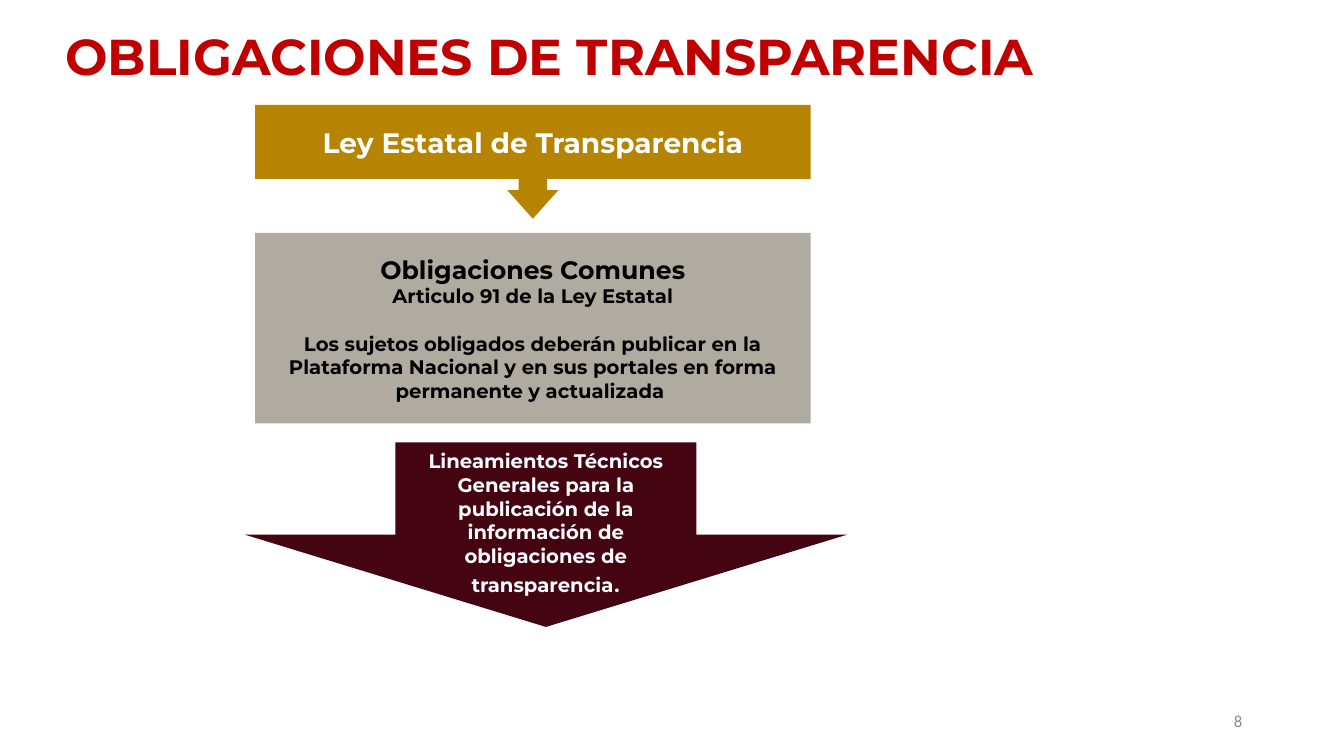
from pptx import Presentation
from pptx import util as u
from pptx.dml.color import RGBColor
from pptx.enum import shapes, text

PX = 9144
SHAPE = shapes.MSO_SHAPE
ALIGN = text.PP_ALIGN


def px(length):
    return u.Emu(length * PX)


def color(hex_code):
    return RGBColor.from_string(hex_code)


def write(paragraph, content, size=14, font="Montserrat", ink="FFFFFF", bold=True,
          align=ALIGN.CENTER, before=0, spacing=1.0):
    paragraph.alignment = align
    paragraph.space_before = u.Pt(before)
    paragraph.line_spacing = spacing
    run = paragraph.add_run()
    run.text = content
    run.font.size = u.Pt(size)
    run.font.name = font
    run.font.bold = bold
    run.font.color.rgb = color(ink)


def prepare(frame, top=5, right=10):
    frame.word_wrap = True
    frame.vertical_anchor = text.MSO_ANCHOR.MIDDLE
    frame.margin_left, frame.margin_right = px(10), px(right)
    frame.margin_top, frame.margin_bottom = px(top), px(5)
    return frame


def add_label(slide, box, right=10):
    label = slide.shapes.add_textbox(*map(px, box))
    return prepare(label.text_frame, right=right).paragraphs[0]


def add_block(slide, preset, box, fill, adjustments=(), top=5):
    block = slide.shapes.add_shape(preset, *map(px, box))
    block.shadow.inherit = False
    block.fill.solid()
    block.fill.fore_color.rgb = color(fill)
    block.line.fill.background()
    for index, value in enumerate(adjustments):
        block.adjustments[index] = value
    return prepare(block.text_frame, top=top)


def draw_title(slide, box):
    write(add_label(slide, box, right=22), "OBLIGACIONES DE TRANSPARENCIA",
          size=36, ink="C00000", spacing=0.9)


def draw_page_number(slide, box):
    write(add_label(slide, box), "8", size=12, font="Calibri", ink="8C8C8C",
          bold=False, align=ALIGN.RIGHT)


def draw_obligations(slide, left, top, width):
    law = add_block(slide, SHAPE.DOWN_ARROW_CALLOUT, (left, top, width, 113),
                    "B68400", (0.25, 0.224, 0.25, 0.65))
    write(law.paragraphs[0], "Ley Estatal de Transparencia", size=20)

    common = add_block(slide, SHAPE.RECTANGLE, (left, top + 127, width, 189), "B0ABA1")
    write(common.paragraphs[0], "Obligaciones Comunes", size=18, ink="000000")
    write(common.add_paragraph(), "Articulo 91 de la Ley Estatal", ink="000000")
    write(common.add_paragraph(),
          "Los sujetos obligados deberán publicar en la Plataforma Nacional "
          "y en sus portales en forma permanente y actualizada ",
          ink="000000", before=17)

    guidelines = add_block(slide, SHAPE.DOWN_ARROW, (left - 10, top + 335, width + 46, 183),
                           "440412", top=28)
    sentence = guidelines.paragraphs[0]
    write(sentence, "Lineamientos Técnicos Generales para la publicación de la "
                    "información de obligaciones de transparencia")
    write(sentence, ".", size=18, font="Calibri")


def main():
    deck = Presentation()
    deck.slide_width, deck.slide_height = px(1333), px(750)
    slide = deck.slides.add_slide(deck.slide_layouts[6])
    draw_title(slide, (-24, 26, 1150, 66))
    draw_page_number(slide, (942, 695, 300, 40))
    draw_obligations(slide, 253, 104, 551)
    deck.save("out.pptx")


if __name__ == "__main__":
    main()
